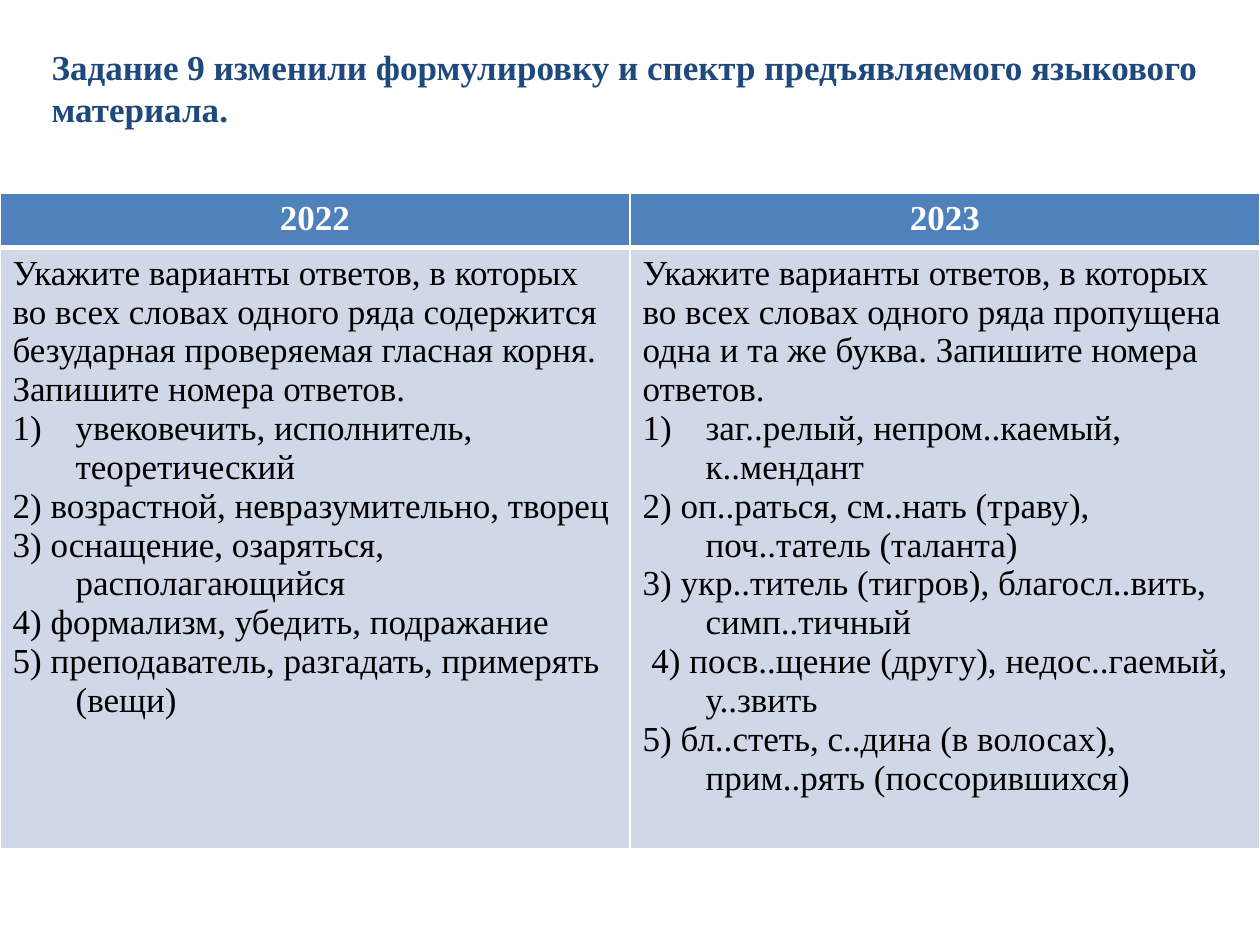
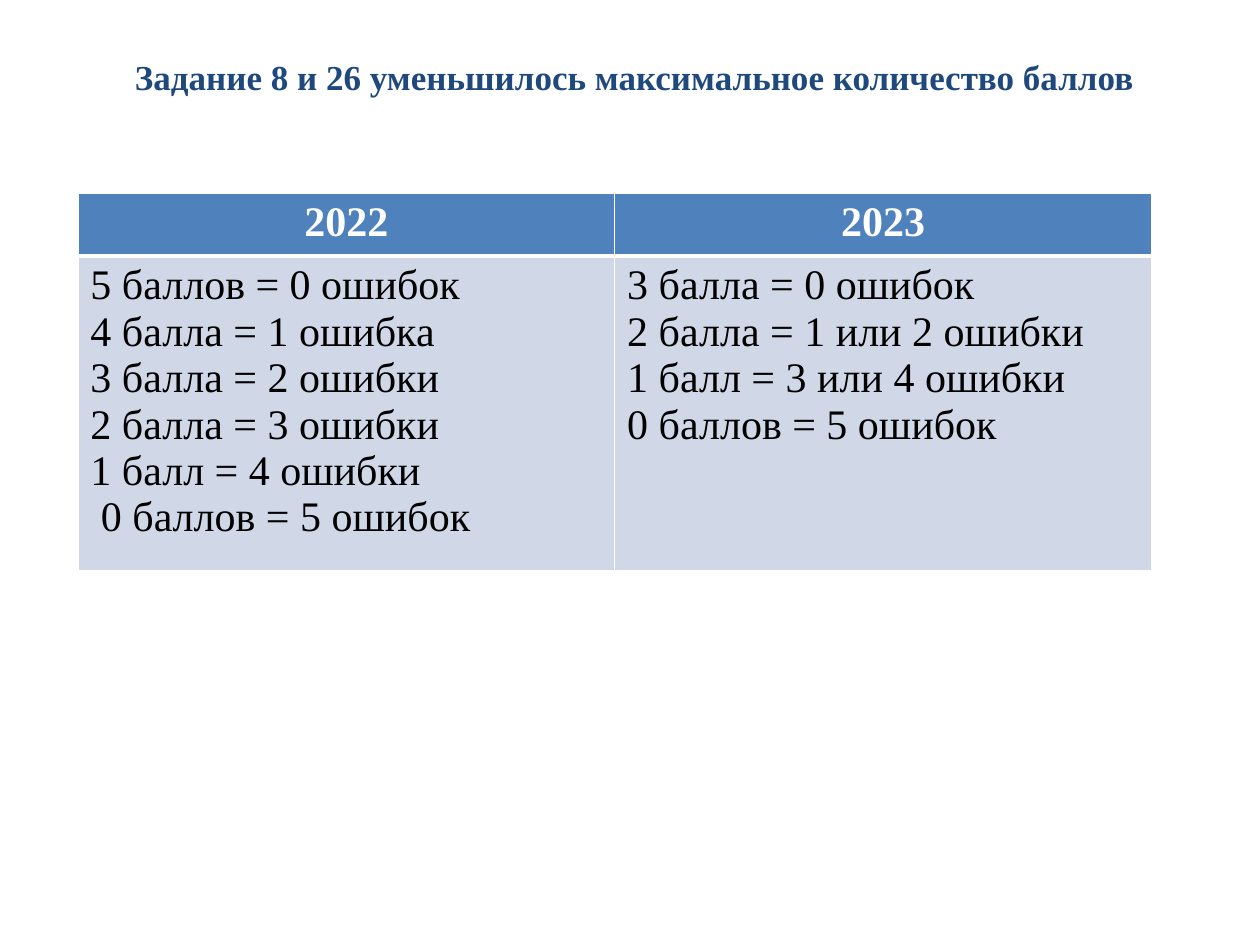
"""Build two slides that compare exam tasks of 2022 and 2023."""
from dataclasses import dataclass

from lxml import etree
from pptx import Presentation
from pptx import util as u
from pptx.dml import color
from pptx.enum import text
from pptx.oxml import ns

FONT = "Times New Roman"
NAVY, BLUE, PALE, WHITE, BLACK = "1F497D", "4F81BD", "D0D8E8", "FFFFFF", "000000"
TITLE_SIZE = 20
TITLE_LEFT, TITLE_WIDTH = 0.79, 24.0
TABLE_TOP = 3.89
HANGING_INDENT = 1.27
THIN, THICK = 1, 3
YEARS = ("2022", "2023")
LEFT, CENTER = text.PP_ALIGN.LEFT, text.PP_ALIGN.CENTER


@dataclass(frozen=True)
class Line:
    """A paragraph, optionally hanging and automatically numbered."""

    words: str
    hanging: bool = False
    numbered: bool = False


@dataclass(frozen=True)
class Title:
    """A slide title with its vertical place in centimetres."""

    words: str
    top: float
    height: float
    align: text.PP_ALIGN


@dataclass(frozen=True)
class Comparison:
    """A table with one column for each year, lengths in centimetres."""

    left: float
    column_width: float
    header_height: float
    body_height: float
    size: int
    columns: tuple[list[Line], ...]


def rgb(value: str) -> color.RGBColor:
    """Turn a hex string into a colour."""
    return color.RGBColor.from_string(value)


def task(question: str, first: str, *others: str) -> list[Line]:
    """List a question, its numbered first answer and the other answers."""
    return [Line(question), Line(first, True, True), *(Line(other, True) for other in others)]


def indent(paragraph, numbered: bool) -> None:
    """Give a paragraph a hanging indent and, if asked, a number."""
    properties = paragraph._p.get_or_add_pPr()
    length = u.Cm(HANGING_INDENT)
    for name, value in {"marL": length, "indent": -length}.items():
        properties.set(name, str(int(value)))
    if numbered:
        etree.SubElement(properties, ns.qn("a:buAutoNum"), type="arabicParenR")


def write(frame, lines: list[Line], size: int, ink: str, bold: bool, align: text.PP_ALIGN) -> None:
    """Write lines into a text frame in one format."""
    font_format = {"name": FONT, "size": u.Pt(size), "bold": bold}
    for index, line in enumerate(lines):
        paragraph = frame.add_paragraph() if index else frame.paragraphs[0]
        paragraph.alignment = align
        if line.hanging:
            indent(paragraph, line.numbered)
        run = paragraph.add_run()
        run.text = line.words
        for name, value in font_format.items():
            setattr(run.font, name, value)
        run.font.color.rgb = rgb(ink)


def add_title(slide, title: Title) -> None:
    """Draw the slide title."""
    box = (TITLE_LEFT, title.top, TITLE_WIDTH, title.height)
    shape = slide.shapes.add_textbox(*map(u.Cm, box))
    frame_format = {"word_wrap": True, "auto_size": text.MSO_AUTO_SIZE.SHAPE_TO_FIT_TEXT}
    for name, value in frame_format.items():
        setattr(shape.text_frame, name, value)
    write(shape.text_frame, [Line(title.words)], TITLE_SIZE, NAVY, True, title.align)


def style_cell(cell, fill: str, top: int, bottom: int) -> None:
    """Fill a cell and draw its white borders."""
    cell.fill.solid()
    cell.fill.fore_color.rgb = rgb(fill)
    properties = cell._tc.get_or_add_tcPr()
    widths = {"lnL": THIN, "lnR": THIN, "lnT": top, "lnB": bottom}
    for index, (side, width) in enumerate(widths.items()):
        border = etree.Element(ns.qn(f"a:{side}"), w=str(int(u.Pt(width))))
        solid = etree.SubElement(border, ns.qn("a:solidFill"))
        etree.SubElement(solid, ns.qn("a:srgbClr"), val=WHITE)
        properties.insert(index, border)


def add_comparison(slide, comparison: Comparison) -> None:
    """Draw the table that sets the years side by side."""
    heights = (comparison.header_height, comparison.body_height)
    box = (comparison.left, TABLE_TOP, comparison.column_width * len(YEARS), sum(heights))
    table = slide.shapes.add_table(len(heights), len(YEARS), *map(u.Cm, box)).table
    for row, height in zip(table.rows, heights):
        row.height = u.Cm(height)
    for index, (year, lines) in enumerate(zip(YEARS, comparison.columns)):
        table.columns[index].width = u.Cm(comparison.column_width)
        header, body = table.cell(0, index), table.cell(1, index)
        style_cell(header, BLUE, THIN, THICK)
        style_cell(body, PALE, THICK, THIN)
        write(header.text_frame, [Line(year)], comparison.size, WHITE, True, CENTER)
        write(body.text_frame, lines, comparison.size, BLACK, False, LEFT)


SPELLING = Comparison(0, 12.7, 1.1, 12.09, 20, (
    task(
        "Укажите варианты ответов, в которых во всех словах одного ряда содержится "
        "безударная проверяемая гласная корня. Запишите номера ответов.",
        "увековечить, исполнитель, теоретический",
        "2) возрастной, невразумительно, творец",
        "3) оснащение, озаряться, располагающийся",
        "4) формализм, убедить, подражание",
        "5) преподаватель, разгадать, примерять (вещи)",
    ),
    task(
        "Укажите варианты ответов, в которых во всех словах одного ряда пропущена "
        "одна и та же буква. Запишите номера ответов.",
        "заг..релый, непром..каемый, к..мендант",
        "2) оп..раться, см..нать (траву), поч..татель (таланта)",
        "3) укр..титель (тигров), благосл..вить, симп..тичный",
        " 4) посв..щение (другу), недос..гаемый, у..звить",
        "5) бл..стеть, с..дина (в волосах), прим..рять (поссорившихся)",
    ),
))

SCORES = Comparison(1.57, 10.82, 1.26, 6.35, 24, (
    [Line(words) for words in (
        "5 баллов = 0 ошибок",
        "4 балла = 1 ошибка",
        "3 балла = 2 ошибки",
        "2 балла = 3 ошибки",
        "1 балл = 4 ошибки",
        " 0 баллов = 5 ошибок",
    )],
    [Line(words) for words in (
        "3 балла = 0 ошибок",
        "2 балла = 1 или 2 ошибки",
        "1 балл = 3 или 4 ошибки",
        "0 баллов = 5 ошибок",
    )],
))

SLIDES = (
    (Title("Задание 9 изменили формулировку и спектр предъявляемого языкового материала.",
           0.79, 1.96, LEFT), SPELLING),
    (Title("Задание 8 и 26 уменьшилось максимальное количество баллов",
           0.99, 1.12, CENTER), SCORES),
)


def main() -> None:
    """Build and save the presentation."""
    presentation = Presentation()
    for name, value in {"slide_width": u.Cm(25.4), "slide_height": u.Cm(19.05)}.items():
        setattr(presentation, name, value)
    for title, comparison in SLIDES:
        slide = presentation.slides.add_slide(presentation.slide_layouts[6])
        add_title(slide, title)
        add_comparison(slide, comparison)
    presentation.save("out.pptx")


if __name__ == "__main__":
    main()
